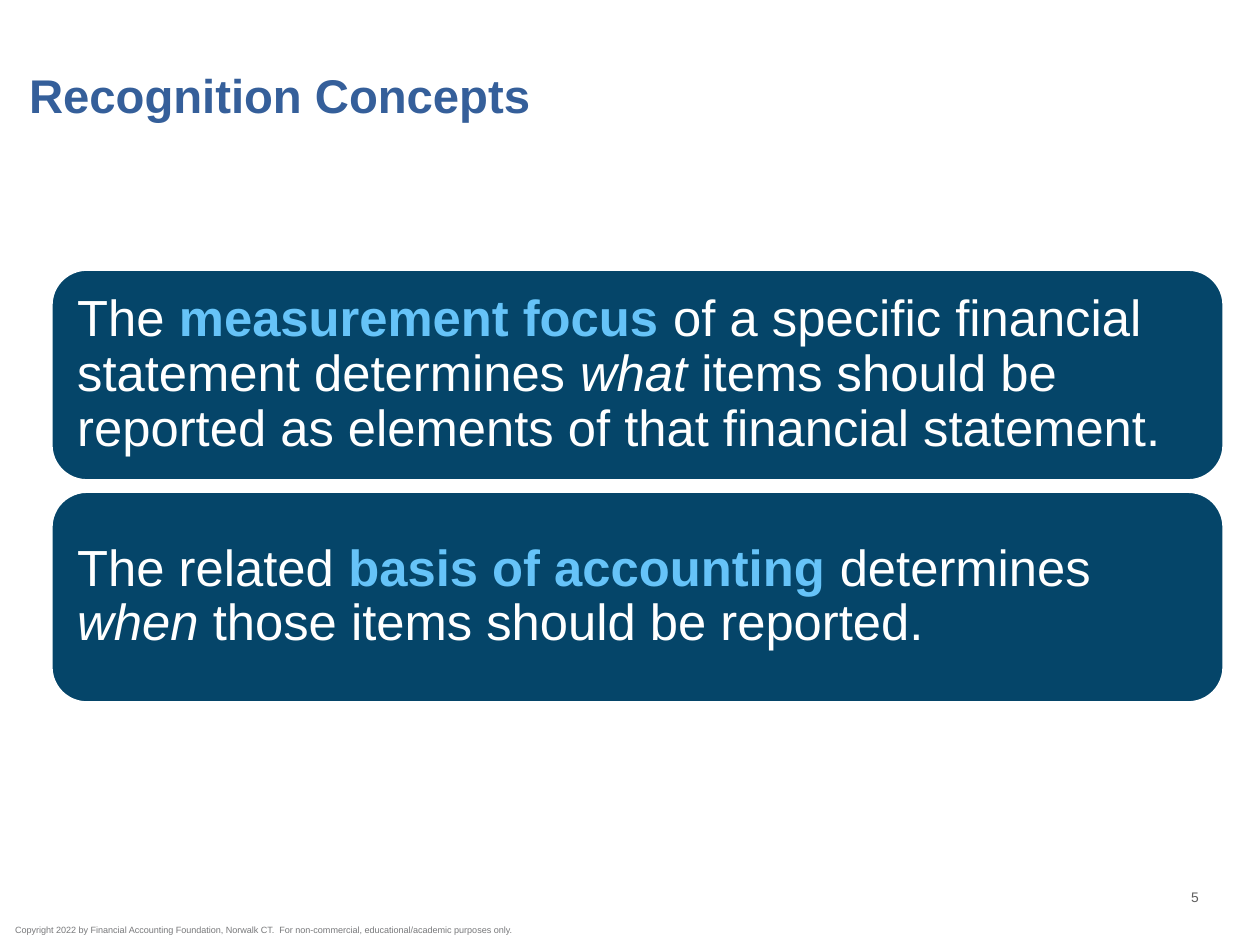
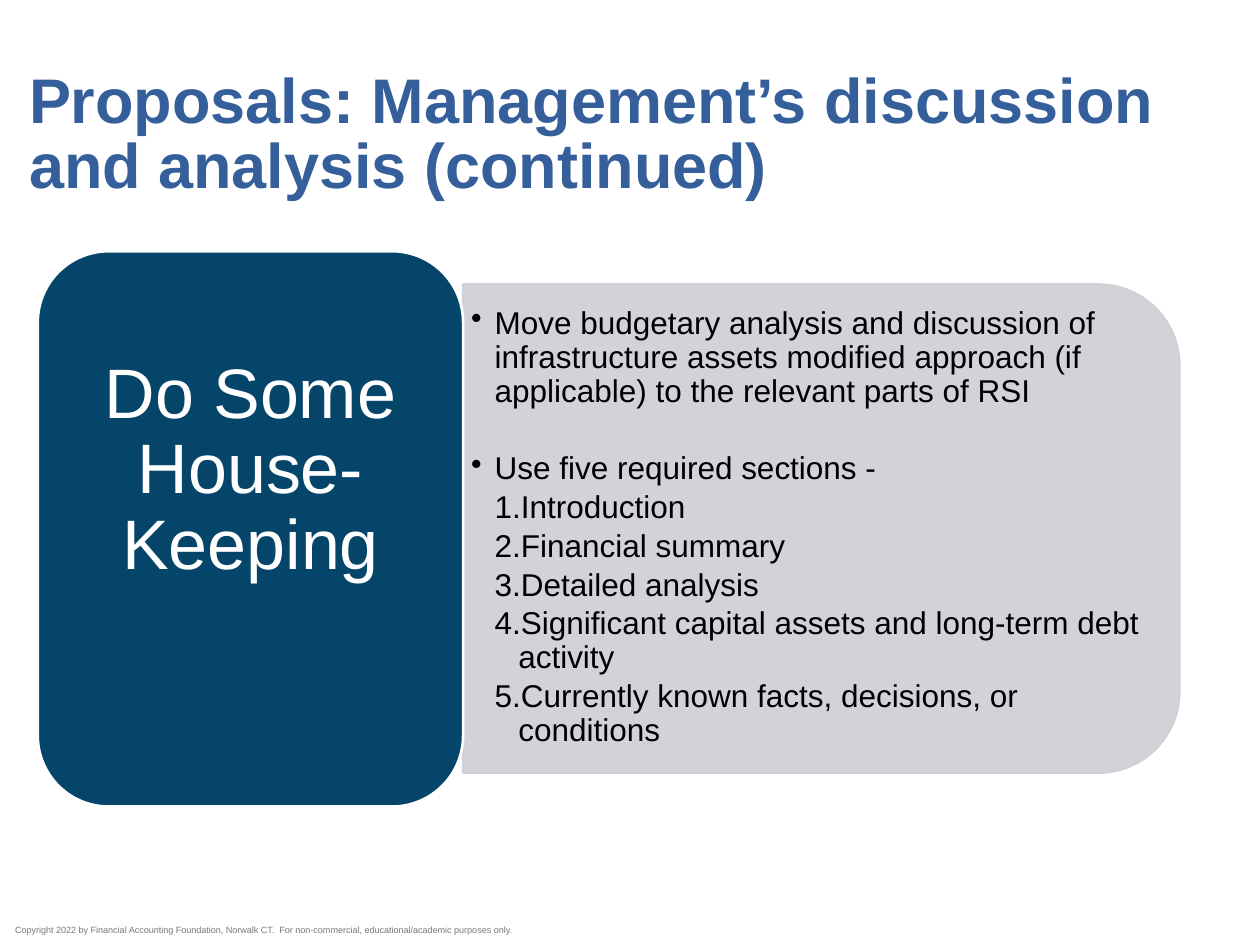
from dataclasses import dataclass
from typing import NamedTuple

from lxml import etree
from pptx import Presentation
from pptx.dml.color import RGBColor
from pptx.enum import shapes, text
from pptx.oxml import ns
from pptx.util import Pt


# Theme: colours in RRGGBB, sizes in points
@dataclass(frozen=True)
class Theme:
    font: str = "Arial"
    title: str = "355F9A"
    panel: str = "054569"
    accent: str = "66C3F8"
    detail: str = "CCCFD4"
    white: str = "FFFFFF"
    black: str = "000000"
    footer: str = "78797B"
    number: str = "5F5F5F"
    statement_size: float = 29
    heading_size: float = 40
    list_size: float = 18
    footer_size: float = 5.2
    number_size: float = 7.9
    line_spacing: float = 0.9


THEME = Theme()


class Box(NamedTuple):
    left: float
    top: float
    width: float
    height: float


class Insets(NamedTuple):
    left: float = 0
    top: float = 0
    right: float = 0
    bottom: float = 0


class Span(NamedTuple):
    words: str
    color: str = THEME.white
    bold: bool = False
    italic: bool = False


class Title(NamedTuple):
    words: str
    top: float
    size: float
    spacing: float


class ListItem(NamedTuple):
    words: str
    numbered: bool = False
    space_before: float = 0


# Shared drawing helpers
def points(values):
    return [Pt(value) for value in values]


def add_run(paragraph, span: Span, size: float) -> None:
    run = paragraph.add_run()
    run.text = span.words
    font = run.font
    font.name, font.size = THEME.font, Pt(size)
    font.bold, font.italic = span.bold, span.italic
    font.color.rgb = RGBColor.from_string(span.color)


def set_frame(shape, insets: Insets, anchor=text.MSO_ANCHOR.MIDDLE):
    frame = shape.text_frame
    frame.word_wrap = True
    frame.vertical_anchor = anchor
    (frame.margin_left, frame.margin_top,
     frame.margin_right, frame.margin_bottom) = points(insets)
    return frame


def add_text(slide, box: Box, span: Span, size: float, insets=Insets(),
             anchor=text.MSO_ANCHOR.MIDDLE, align=text.PP_ALIGN.LEFT):
    frame = set_frame(slide.shapes.add_textbox(*points(box)), insets, anchor)
    paragraph = frame.paragraphs[0]
    paragraph.alignment = align
    add_run(paragraph, span, size)
    return paragraph


def add_panel(slide, kind, box: Box, color: str, line: str, line_width: float):
    panel = slide.shapes.add_shape(kind, *points(box))
    panel.shadow.inherit = False
    panel.fill.solid()
    panel.fill.fore_color.rgb = RGBColor.from_string(color)
    panel.line.color.rgb = RGBColor.from_string(line)
    panel.line.width = Pt(line_width)
    return panel


def add_rounded_panel(slide, box: Box, spans, size: float, insets: Insets,
                      align, line_width: float) -> None:
    panel = add_panel(slide, shapes.MSO_SHAPE.ROUNDED_RECTANGLE, box,
                      THEME.panel, THEME.white, line_width)
    paragraph = set_frame(panel, insets).paragraphs[0]
    paragraph.alignment = align
    paragraph.line_spacing = THEME.line_spacing
    for span in spans:
        add_run(paragraph, span, size)


def set_opacity(shape, percent: int) -> None:
    for color in shape._element.spPr.iter(ns.qn("a:srgbClr")):
        etree.SubElement(color, ns.qn("a:alpha"), val=str(percent * 1000))


def add_list_item(paragraph, item: ListItem) -> None:
    hanging = 13.5
    properties = paragraph._p.get_or_add_pPr()
    properties.set("marL", str(Pt(hanging * (2 if item.numbered else 1))))
    properties.set("indent", str(-Pt(hanging)))
    if item.numbered:
        etree.SubElement(properties, ns.qn("a:buAutoNum"), type="arabicPeriod")
    else:
        etree.SubElement(properties, ns.qn("a:buChar"), char="•")
    paragraph.line_spacing = THEME.line_spacing
    paragraph.space_after = Pt(2.7)
    if item.space_before:
        paragraph.space_before = Pt(item.space_before)
    add_run(paragraph, Span(item.words, THEME.black), THEME.list_size)


def add_base_slide(deck, title: Title):
    slide = deck.slides.add_slide(deck.slide_layouts[6])
    add_text(slide, Box(8.64, 528.5, 391, 10),
             Span("Copyright 2022 by Financial Accounting Foundation, Norwalk CT.  "
                  "For non-commercial, educational/academic purposes only.",
                  THEME.footer),
             THEME.footer_size, anchor=text.MSO_ANCHOR.TOP)
    heading = add_text(slide, Box(9.5, title.top, 683.3, 70.6),
                       Span(title.words, THEME.title, bold=True),
                       title.size, Insets(left=7.2))
    heading.line_spacing = Pt(title.spacing)
    return slide


# Slide 1: two stacked statements
STATEMENTS = (
    (Span("The "),
     Span("measurement focus ", THEME.accent, bold=True),
     Span("of a specific financial statement determines "),
     Span("what", italic=True),
     Span(" items should be reported as elements of that financial statement.")),
    (Span("The related "),
     Span("basis of accounting ", THEME.accent, bold=True),
     Span("determines "),
     Span("when", italic=True),
     Span(" those items should be reported.")),
)


def build_recognition(deck) -> None:
    slide = add_base_slide(deck, Title("Recognition Concepts", 20.9, 27, 27.8))
    first_top, height, gap = 154.3, 120, 6.9
    for row, spans in enumerate(STATEMENTS):
        box = Box(29.6, first_top + row * (height + gap), 669.4, height)
        add_rounded_panel(slide, box, spans, THEME.statement_size,
                          Insets(8.7, 8.7, 8.7, 8.7), text.PP_ALIGN.LEFT, 1)
    add_text(slide, Box(645.8, 500.4, 74.2, 23.8), Span("5", THEME.number),
             THEME.number_size, Insets(7.2, 3.6, 7.2, 3.6),
             align=text.PP_ALIGN.CENTER)


# Slide 2: heading panel with a detail list
PROPOSALS = (
    ListItem("Move budgetary analysis and discussion of infrastructure assets "
             "modified approach (if applicable) to the relevant parts of RSI"),
    ListItem("Use five required sections -", space_before=22),
    ListItem("Introduction", numbered=True),
    ListItem("Financial summary", numbered=True),
    ListItem("Detailed analysis", numbered=True),
    ListItem("Significant capital assets and long-term debt activity", numbered=True),
    ListItem("Currently known facts, decisions, or conditions", numbered=True),
)


def build_proposals(deck) -> None:
    slide = add_base_slide(deck, Title(
        "Proposals: Management’s discussion and analysis (continued)",
        42.5, 36, 37))

    # Detail panel, turned so its rounded corners face right
    detail = add_panel(slide, shapes.MSO_SHAPE.ROUND_2_SAME_RECTANGLE,
                       Box(329.6, 97.2, 279.4, 409.7),
                       THEME.detail, THEME.detail, 1)
    detail.rotation = 90
    set_opacity(detail, 90)

    details = slide.shapes.add_textbox(*points(Box(264.2, 175.7, 396, 252)))
    frame = set_frame(details, Insets(5, 2.9, 5, 2.9))
    for index, item in enumerate(PROPOSALS):
        paragraph = frame.add_paragraph() if index else frame.paragraphs[0]
        add_list_item(paragraph, item)

    # Heading panel; the deep bottom inset lifts the words above the middle
    add_rounded_panel(slide, Box(21.6, 143.6, 243, 317.3),
                      [Span("Do Some House-Keeping")], THEME.heading_size,
                      Insets(12, 6, 12, 72), text.PP_ALIGN.CENTER, 1.5)


def main() -> None:
    deck = Presentation()
    deck.slide_width, deck.slide_height = Pt(720), Pt(540)
    build_recognition(deck)
    build_proposals(deck)
    deck.save("out.pptx")


if __name__ == "__main__":
    main()
